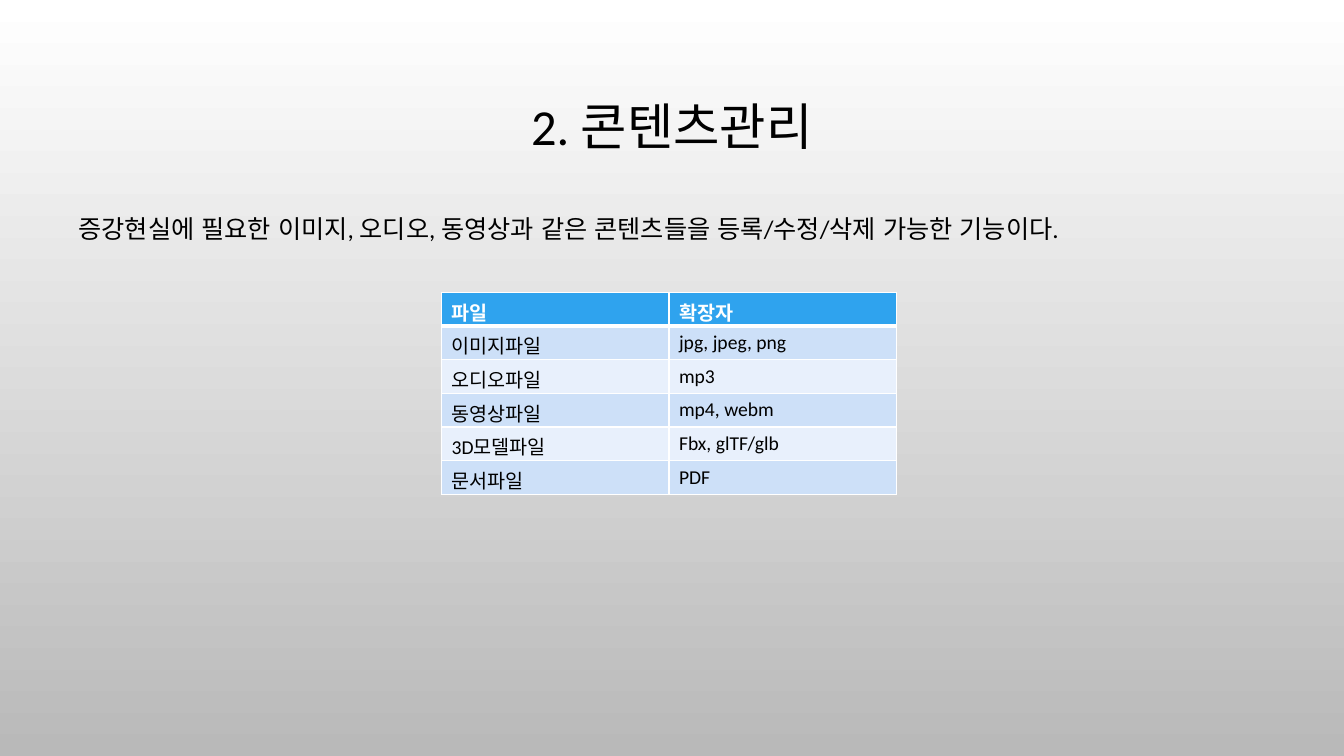
import pptx
import pptx.util
import pptx.dml.color
import pptx.enum.lang
import pptx.enum.text
import pptx.oxml
import pptx.oxml.ns

Inches, Pt = pptx.util.Inches, pptx.util.Pt

# Content
TITLE = "2. 콘텐츠관리"
INTRO = "증강현실에 필요한 이미지, 오디오, 동영상과 같은 콘텐츠들을 등록/수정/삭제 가능한 기능이다."
ROWS = [
    ("파일", "확장자"),
    ("이미지파일", "jpg, jpeg, png"),
    ("오디오파일", "mp3"),
    ("동영상파일", "mp4, webm"),
    ("3D모델파일", "Fbx, glTF/glb"),
    ("문서파일", "PDF"),
]
COLORS = {
    "white": "FFFFFF", "gray": "B9B9B9", "black": "000000",
    "head": "2FA3EE", "odd": "CDE0F8", "even": "E8F0FC",
}
FONT = "Calibri"


def color(name):
    return pptx.dml.color.RGBColor.from_string(COLORS[name])


def write(frame, text, size, ink="black", bold=False, align=None, space=None):
    para = frame.paragraphs[0]
    para.alignment = align
    para.line_spacing = space
    run = para.add_run()
    run.text = text
    font = run.font
    font.name, font.size, font.bold = FONT, Pt(size), bold
    font.color.rgb = color(ink)
    font.language_id = pptx.enum.lang.MSO_LANGUAGE_ID.KOREAN


def add_box(slide, left, top, width, height):
    box = slide.shapes.add_textbox(Inches(left), Inches(top), Inches(width), Inches(height))
    box.text_frame.word_wrap = True
    return box.text_frame


def add_edge(cell, side, width):
    line = pptx.oxml.parse_xml(
        f'<a:{side} {pptx.oxml.ns.nsdecls("a")} w="{Pt(width)}"><a:solidFill>'
        f'<a:srgbClr val="{COLORS["white"]}"/></a:solidFill></a:{side}>')
    props = cell._tc.get_or_add_tcPr()
    props.insert(len(props) - 1, line)  # edges go ahead of the fill


def add_grid(slide, left, top, width, height):
    grid = slide.shapes.add_table(
        len(ROWS), len(ROWS[0]), Inches(left), Inches(top), Inches(width), Inches(height)).table
    for r, row in enumerate(ROWS):
        head = r == 0
        for c, text in enumerate(row):
            cell = grid.cell(r, c)
            cell.fill.solid()
            cell.fill.fore_color.rgb = color("head" if head else "odd" if r % 2 else "even")
            write(cell.text_frame, text, 14, ink="white" if head else "black", bold=head)
            for side in ("lnL", "lnR", "lnT", "lnB"):
                thick = (head and side == "lnB") or (r == 1 and side == "lnT")
                add_edge(cell, side, 3 if thick else 1)


def main():
    deck = pptx.Presentation()
    deck.slide_width, deck.slide_height = Inches(13.33), Inches(7.5)
    slide = deck.slides.add_slide(deck.slide_layouts[6])

    # Background, white at the top
    fill = slide.background.fill
    fill.gradient()
    fill.gradient_angle = 270
    for stop, name, place in zip(fill.gradient_stops, ("white", "gray"), (0, 1)):
        stop.color.rgb = color(name)
        stop.position = place

    # Title and intro
    frame = add_box(slide, 1, 0.68, 11.33, 1.21)
    frame.vertical_anchor = pptx.enum.text.MSO_ANCHOR.MIDDLE
    write(frame, TITLE, 36, align=pptx.enum.text.PP_ALIGN.CENTER, space=0.9)
    frame = add_box(slide, 0.68, 2.07, 11.97, 0.4)
    frame.auto_size = pptx.enum.text.MSO_AUTO_SIZE.SHAPE_TO_FIT_TEXT
    write(frame, INTRO, 18)

    # File types
    add_grid(slide, 4.38, 2.9, 4.51, 2)
    deck.save("out.pptx")


if __name__ == "__main__":
    main()
